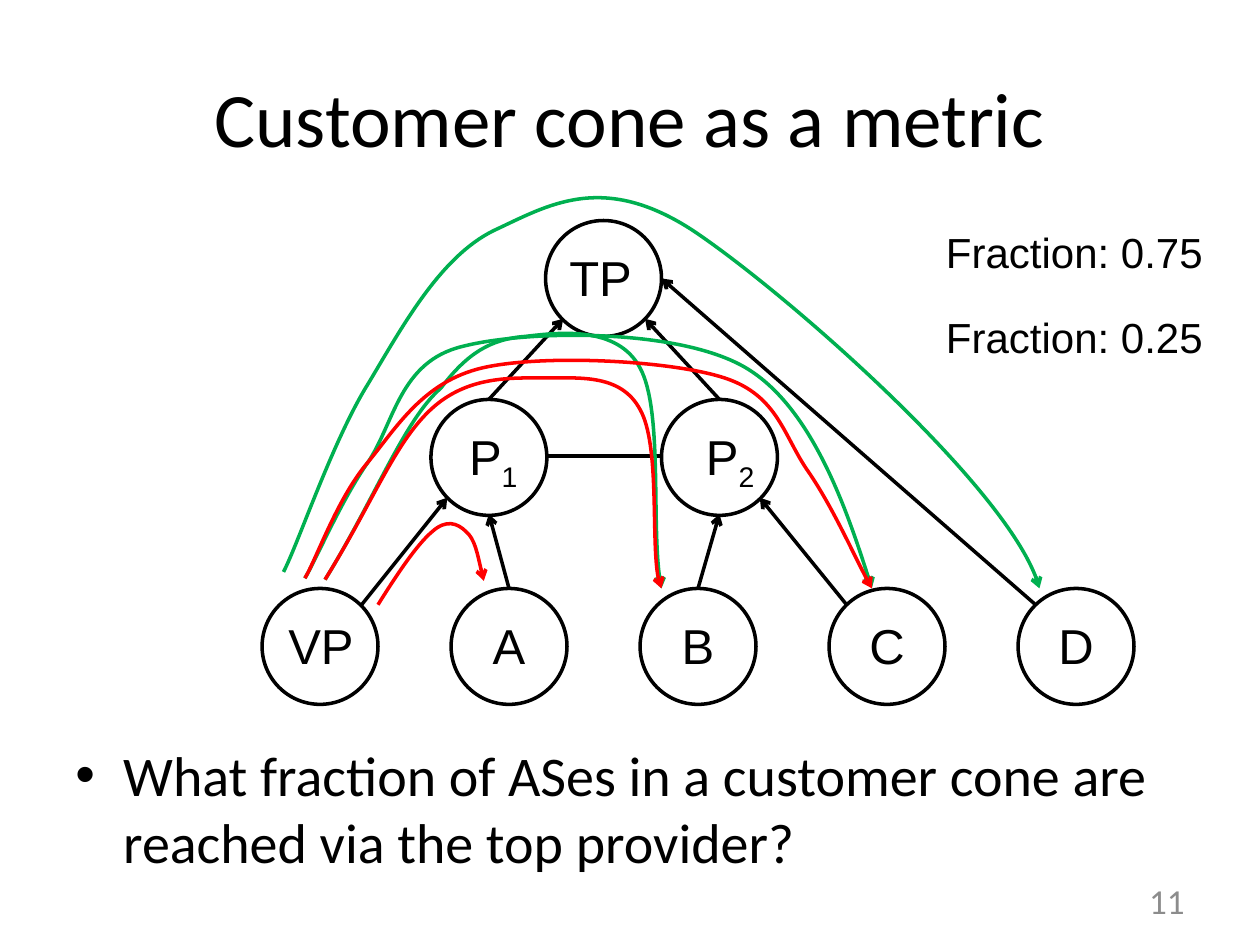
from lxml import etree
from pptx import Presentation
from pptx.dml.color import RGBColor
from pptx.enum.shapes import MSO_CONNECTOR, MSO_SHAPE
from pptx.enum.text import MSO_ANCHOR, PP_ALIGN
from pptx.oxml.ns import qn
from pptx.util import Inches, Pt

BLACK = RGBColor(0x00, 0x00, 0x00)
GRAY = RGBColor(0x8C, 0x8C, 0x8C)
GREEN = RGBColor(0x00, 0xB0, 0x50)
RED = RGBColor(0xFF, 0x00, 0x00)
LEFT, CENTER, RIGHT = PP_ALIGN.LEFT, PP_ALIGN.CENTER, PP_ALIGN.RIGHT
TOP, MIDDLE = MSO_ANCHOR.TOP, MSO_ANCHOR.MIDDLE
NODE_SIZE = 0.92

prs = Presentation()
prs.slide_width, prs.slide_height = Inches(10), Inches(7.5)
s = prs.slides.add_slide(prs.slide_layouts[6])


def add_text(box, text, size, font="Arial", color=BLACK, align=LEFT, anchor=TOP, wrap=True):
    tf = s.shapes.add_textbox(*map(Inches, box)).text_frame
    tf.word_wrap = wrap
    tf.vertical_anchor = anchor
    p = tf.paragraphs[0]
    p.alignment = align
    p.font.size, p.font.name, p.font.color.rgb = Pt(size), font, color
    p.add_run().text = text
    return p


def style_line(sp, color, arrow):
    sp.line.color.rgb = color
    sp.line.width = Pt(2)
    if arrow:
        etree.SubElement(sp.line._get_or_add_ln(), qn("a:tailEnd"), type="arrow")


add_text((0.5, 0.3, 9, 1.25), "Customer cone as a metric", 44, "Calibri", align=CENTER, anchor=MIDDLE)

p = add_text((0.5, 5.83, 9, 1.42),
             "What fraction of ASes in a customer cone are reached via the top provider?", 32, "Calibri")
pPr = p._p.get_or_add_pPr()
pPr.set("marL", str(Inches(0.38)))
pPr.set("indent", str(-Inches(0.38)))
bullet_font = etree.Element(qn("a:buFont"), typeface="Arial")
bullet = etree.Element(qn("a:buChar"), char="•")
pPr.insert(0, bullet_font)
bullet_font.addnext(bullet)

add_text((8.83, 6.95, 0.67, 0.4), "11", 20, "Calibri", GRAY, RIGHT, MIDDLE)

nodes = [
    ("VP", "", 2.08, 4.67, 0.11, 0.72, LEFT),
    ("TP", "", 4.33, 1.75, 0.09, 0.73, LEFT),
    ("P", "1", 3.42, 3.17, 0.16, 0.67, CENTER),
    ("P", "2", 5.25, 3.17, 0.17, 0.75, CENTER),
]
for i, name in enumerate("ABCD"):
    nodes.append((name, "", 3.58 + 1.5 * i, 4.67, 0.17, 0.58, CENTER))

for name, subscript, x, y, dx, width, align in nodes:
    sp = s.shapes.add_shape(MSO_SHAPE.OVAL, Inches(x), Inches(y), Inches(NODE_SIZE), Inches(NODE_SIZE))
    sp.shadow.inherit = False
    sp.fill.background()
    style_line(sp, BLACK, False)
    p = add_text((x + dx, y + 0.165, width, 0.57), name, 28, align=align, wrap=align == CENTER)
    if subscript:
        r = p.add_run()
        r.text = subscript
        r.font._element.set("baseline", "-25000")

links = [
    (2.87, 4.8, 3.55, 3.95, True),
    (3.88, 3.17, 4.47, 2.53, True),
    (5.71, 3.17, 5.12, 2.53, True),
    (6.72, 4.8, 6.03, 3.95, True),
    (4.04, 4.67, 3.88, 4.08, True),
    (5.54, 4.67, 5.71, 4.08, True),
    (8.22, 4.8, 5.25, 2.21, True),
    (4.33, 3.62, 5.25, 3.62, False),
]
for x1, y1, x2, y2, arrow in links:
    link = s.shapes.add_connector(MSO_CONNECTOR.STRAIGHT, *map(Inches, (x1, y1, x2, y2)))
    style_line(link, BLACK, arrow)
    etree.SubElement(link._element.spPr, qn("a:effectLst"))

routes = [
    (GREEN, [(2.58, 4.6), (2.97, 3.97), (3.21, 3.33), (3.5, 3.08), (3.71, 2.8), (3.9, 2.69), (4.17, 2.67),
             (4.43, 2.64), (4.9, 2.58), (5.08, 2.92), (5.26, 3.25), (5.16, 4.24), (5.25, 4.67)]),
    (GREEN, [(2.42, 4.59), (2.51, 4.44), (2.71, 3.97), (2.92, 3.67), (3.13, 3.36), (3.17, 2.87), (3.67, 2.75),
             (4.17, 2.62), (5.38, 2.6), (5.92, 2.92), (6.46, 3.24), (6.77, 4.2), (6.92, 4.67)]),
    (RED, [(3, 4.8), (3.15, 4.56), (3.31, 4.32), (3.43, 4.22), (3.54, 4.12), (3.63, 4.15), (3.7, 4.22),
           (3.77, 4.28), (3.8, 4.45), (3.84, 4.61)]),
    (RED, [(2.58, 4.6), (2.97, 3.97), (3.13, 3.52), (3.42, 3.25), (3.71, 2.98), (4.06, 3), (4.33, 3),
           (4.61, 3), (4.93, 2.97), (5.08, 3.25), (5.24, 3.53), (5.15, 4.47), (5.25, 4.67)]),
    (RED, [(2.42, 4.59), (2.51, 4.44), (2.68, 3.95), (2.92, 3.67), (3.15, 3.39), (3.36, 3.03), (3.83, 2.92),
           (4.31, 2.81), (5.32, 2.86), (5.75, 3), (6.18, 3.14), (6.22, 3.47), (6.42, 3.75),
           (6.61, 4.03), (6.81, 4.48), (6.92, 4.67)]),
    (GREEN, [(2.25, 4.54), (2.37, 4.31), (2.64, 3.5), (2.92, 3.05), (3.19, 2.6), (3.49, 2.04), (3.92, 1.83),
             (4.35, 1.63), (4.78, 1.36), (5.5, 1.83), (6.22, 2.31), (8.06, 3.92), (8.25, 4.67)]),
]
for color, points in routes:
    start, *controls = [(Inches(x), Inches(y)) for x, y in points]
    builder = s.shapes.build_freeform(*start)
    builder.add_line_segments(controls, close=False)
    sp = builder.convert_to_shape()
    sp.shadow.inherit = False
    sp.fill.background()
    style_line(sp, color, True)
    outline = sp._element.find(".//" + qn("a:path"))
    segments = outline.findall(qn("a:lnTo"))
    for i in range(0, len(segments), 3):
        curve = etree.SubElement(outline, qn("a:cubicBezTo"))
        for segment in segments[i:i + 3]:
            curve.append(segment[0])
            outline.remove(segment)

for y, value in ((1.75, "0.75"), (2.42, "0.25")):
    add_text((7.41, y, 2.26, 0.5), f"Fraction: {value}", 24, wrap=False)

prs.save("out.pptx")
